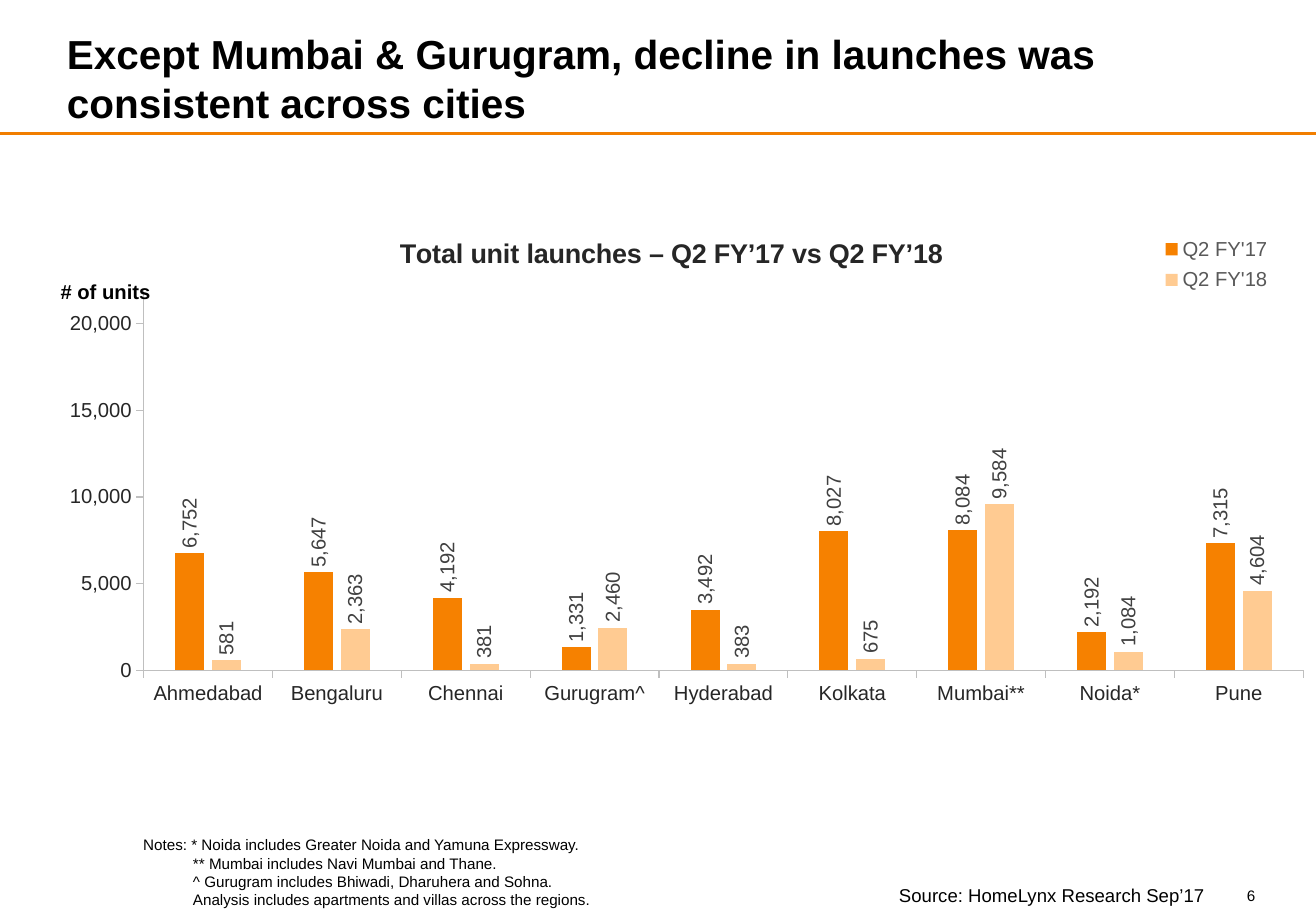
"""Build the slide on unit launches by city."""
from lxml import etree
from pptx import Presentation, util as u
from pptx.chart.data import CategoryChartData
from pptx.dml.color import RGBColor
from pptx.enum import chart as ch, shapes, text
from pptx.oxml import ns

Inches = u.Inches


def style(font, size, color="000000", bold=False):
    font.name, font.size, font.bold = "Arial", u.Pt(size), bold
    font.color.rgb = RGBColor.from_string(color)


def put(words, box, size, bold=False, pad=(0.1, 0.05), wrap=True,
        align="LEFT", anchor="TOP", indent=0):
    frame = slide.shapes.add_textbox(*map(Inches, box)).text_frame
    frame.word_wrap = wrap
    frame.vertical_anchor = getattr(text.MSO_ANCHOR, anchor)
    frame.margin_left = frame.margin_right = Inches(pad[0])
    frame.margin_top = frame.margin_bottom = Inches(pad[1])
    frame.text = words
    for i, para in enumerate(frame.paragraphs):
        if i and indent:
            para._p.get_or_add_pPr().set("marL", str(Inches(indent)))
        para.alignment = getattr(text.PP_ALIGN, align)
        for run in para.runs:
            style(run.font, size, bold=bold)


deck = Presentation()
deck.slide_width, deck.slide_height = Inches(10.83), Inches(7.5)
slide = deck.slides.add_slide(deck.slide_layouts[6])

put("6", (10.12, 7.3, 0.21, 0.15), 9, pad=(0, 0), wrap=False, align="RIGHT")
rule = slide.shapes.add_connector(shapes.MSO_CONNECTOR.STRAIGHT, Inches(10.83),
                                  Inches(1.1), Inches(0), Inches(1.1))
rule.line.color.rgb = RGBColor.from_string("F17E00")
rule.line.width = u.Pt(1.5)
etree.SubElement(rule._element.spPr, ns.qn("a:effectLst"))
put("Source: HomeLynx Research Sep’17", (7.3, 7.23, 3.43, 0.29), 11)

data = CategoryChartData(number_format="#,##0")
data.categories = ["Ahmedabad", "Bengaluru", "Chennai", "Gurugram^", "Hyderabad",
                   "Kolkata", "Mumbai**", "Noida*", "Pune"]
data.add_series("Q2 FY'17", [6752, 5647, 4192, 1331, 3492, 8027, 8084, 2192, 7315])
data.add_series("Q2 FY'18", [581, 2363, 381, 2460, 383, 675, 9584, 1084, 4604])
chart = slide.shapes.add_chart(
    ch.XL_CHART_TYPE.COLUMN_CLUSTERED, Inches(0.54), Inches(1.8),
    Inches(10.19), Inches(4.45), data).chart
style(chart.font, 10)

chart.has_title = True
title = chart.chart_title.text_frame
title.text = "Total unit launches – Q2 FY’17 vs Q2 FY’18"
style(title.paragraphs[0].runs[0].font, 16, "262626", True)

chart.has_legend = True
chart.legend.position = ch.XL_LEGEND_POSITION.RIGHT
chart.legend.include_in_layout = False
style(chart.legend.font, 12, "595959")

for axis in (chart.category_axis, chart.value_axis):
    axis.has_major_gridlines = False
    axis.major_tick_mark = ch.XL_TICK_MARK.OUTSIDE
    axis.minor_tick_mark = ch.XL_TICK_MARK.NONE
    axis.format.line.color.rgb = RGBColor.from_string("BFBFBF")
    axis.format.line.width = u.Pt(0.75)
    style(axis.tick_labels.font, 12, "262626")
units = chart.value_axis
units.minimum_scale, units.maximum_scale, units.major_unit = 0, 22000, 5000
units.tick_labels.number_format = "#,##0"
units.tick_labels.number_format_is_linked = False

plot = chart.plots[0]
plot.gap_width, plot.overlap, plot.vary_by_categories = 219, -27, False
for bars, color in zip(plot.series, ("F68100", "FFCB92")):
    bars.format.fill.solid()
    bars.format.fill.fore_color.rgb = RGBColor.from_string(color)
    tags = bars.data_labels
    tags.show_value = True
    tags.position = ch.XL_LABEL_POSITION.OUTSIDE_END
    tags.number_format, tags.number_format_is_linked = "#,##0", False
    style(tags.font, 12, "404040")
    for body in tags._element.iter(ns.qn("a:bodyPr")):
        body.set("rot", "-5400000")
        body.set("vert", "horz")

area = chart._chartSpace.chart
for part, spot, place in (
        (area.plotArea, 0, {"layoutTarget": "inner", "xMode": "edge", "yMode": "edge",
                            "x": 0.066, "y": 0.13, "w": 0.937, "h": 0.706}),
        (chart.chart_title._element, 1, {"xMode": "edge", "yMode": "edge",
                                         "x": 0.266, "y": 0.023}),
        (chart.legend._element, 1, {"xMode": "edge", "yMode": "edge",
                                    "x": 0.87, "y": 0.02, "w": 0.12, "h": 0.13})):
    for old in part.findall(ns.qn("c:layout")):
        part.remove(old)
    layout = etree.Element(ns.qn("c:layout"))
    manual = etree.SubElement(layout, ns.qn("c:manualLayout"))
    for tag, val in place.items():
        etree.SubElement(manual, ns.qn("c:" + tag)).set("val", str(val))
    part.insert(spot, layout)

put("Except Mumbai & Gurugram, decline in launches was consistent across cities",
    (0.55, 0.18, 9.83, 0.91), 24, bold=True, pad=(0, 0.05), anchor="BOTTOM")
put("# of units", (0.4, 2.25, 2.08, 0.3), 12, bold=True)
put("Notes: * Noida includes Greater Noida and Yamuna Expressway.\n"
    "** Mumbai includes Navi Mumbai and Thane.\n"
    "^ Gurugram includes Bhiwadi, Dharuhera and Sohna.\n"
    "Analysis includes apartments and villas across the regions.",
    (1.08, 6.83, 8.45, 0.71), 9, indent=0.41)

deck.save("out.pptx")
